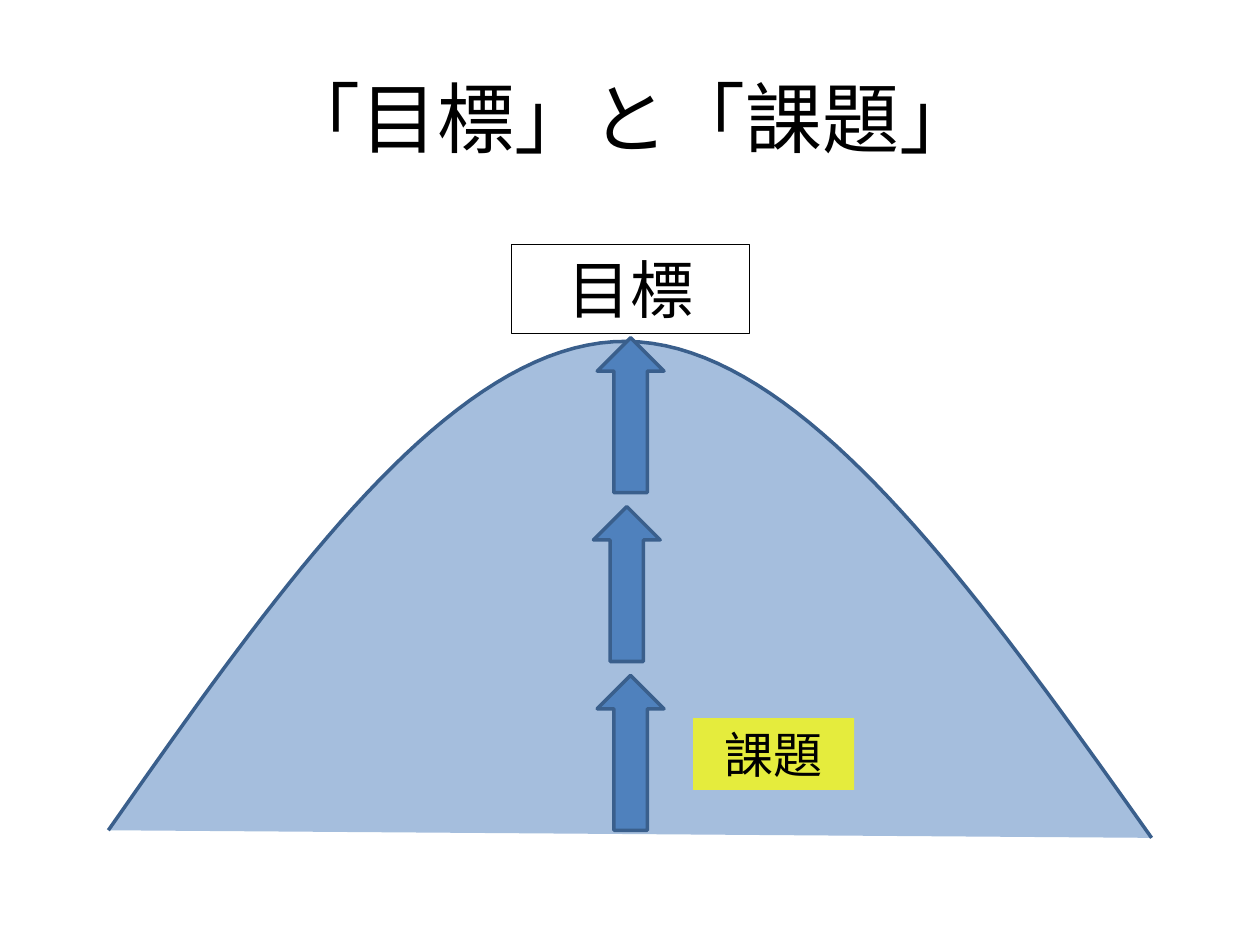
from lxml import etree
from pptx import Presentation
from pptx.dml.color import RGBColor
from pptx.enum import shapes, text
from pptx.oxml.ns import qn
from pptx.util import Inches, Pt

COLORS = {"ink": "000000", "blue": "4F81BD", "edge": "3A5F8C", "yellow": "FFFF00"}
FONT = "Cabin"
HILL = [
    [(0.86, 6.59), (2.22, 4.65), (3.59, 2.7), (4.97, 2.71)],
    [(4.97, 2.71), (6.35, 2.72), (7.75, 4.69), (9.14, 6.65)],
]
STEPS = 40


def bezier(ends, t):
    """Return the point at t on a cubic curve."""
    s = 1 - t
    rates = (s**3, 3 * s * s * t, 3 * s * t * t, t**3)
    return tuple(Inches(sum(r * p[i] for r, p in zip(rates, ends))) for i in (0, 1))


class Board:
    def __init__(self, deck):
        self.slide = deck.slides.add_slide(deck.slide_layouts[5])
        self.shapes = self.slide.shapes

    def color(self, name):
        return RGBColor.from_string(COLORS[name])

    def paint(self, shape, fill=None, line=None, width=2, alpha=None):
        if fill:
            shape.fill.solid()
            shape.fill.fore_color.rgb = self.color(fill)
            if alpha:
                tint = shape.fill._xPr.find(".//" + qn("a:srgbClr"))
                etree.SubElement(tint, qn("a:alpha")).set("val", str(alpha * 1000))
        else:
            shape.fill.background()
        if line:
            shape.line.color.rgb = self.color(line)
            shape.line.width = Pt(width)
        else:
            shape.line.fill.background()

    def letter(self, shape, words, size):
        """Put centred words into a shape."""
        frame = shape.text_frame
        frame.text = words
        frame.word_wrap = True
        para = frame.paragraphs[0]
        para.alignment = text.PP_ALIGN.CENTER
        font = para.runs[0].font
        font.name, font.size = FONT, Pt(size)
        font.color.rgb = self.color("ink")

    def title(self, words, box):
        shape = self.shapes.title
        shape.left, shape.top, shape.width, shape.height = map(Inches, box)
        self.letter(shape, words, 44)
        shape.text_frame.vertical_anchor = text.MSO_ANCHOR.MIDDLE

    def label(self, words, box, size, **style):
        shape = self.shapes.add_textbox(*map(Inches, box))
        self.letter(shape, words, size)
        shape.text_frame.auto_size = text.MSO_AUTO_SIZE.SHAPE_TO_FIT_TEXT
        self.paint(shape, **style)

    def hill(self, curves):
        points = [bezier(c, i / STEPS) for c in curves for i in range(STEPS + 1)]
        outline = self.shapes.build_freeform(*points[0])
        outline.add_line_segments(points[1:], close=False)
        shape = outline.convert_to_shape()
        shape.shadow.inherit = False
        self.paint(shape, "blue", "edge", alpha=51)

    def arrow(self, left, top):
        kind = shapes.MSO_SHAPE.RIGHT_ARROW
        shape = self.shapes.add_shape(kind, *map(Inches, (left, top, 1.23, 0.53)))
        shape.rotation = 270
        shape.shadow.inherit = False
        self.paint(shape, "blue", "edge")


def main():
    deck = Presentation()
    deck.slide_width, deck.slide_height = Inches(10), Inches(7.5)
    board = Board(deck)
    board.title("「目標」と「課題」", (0.5, 0.3, 9, 1.25))
    board.hill(HILL)
    board.label("目標", (4.06, 1.94, 1.89, 0.71), 36, line="ink", width=0.75)
    board.label("課題", (5.5, 5.7, 1.28, 0.57), 28, fill="yellow", alpha=72)
    for i, left in enumerate((4.39, 4.36, 4.39)):
        board.arrow(left, 5.71 - 1.34 * i)
    deck.save("out.pptx")


if __name__ == "__main__":
    main()
